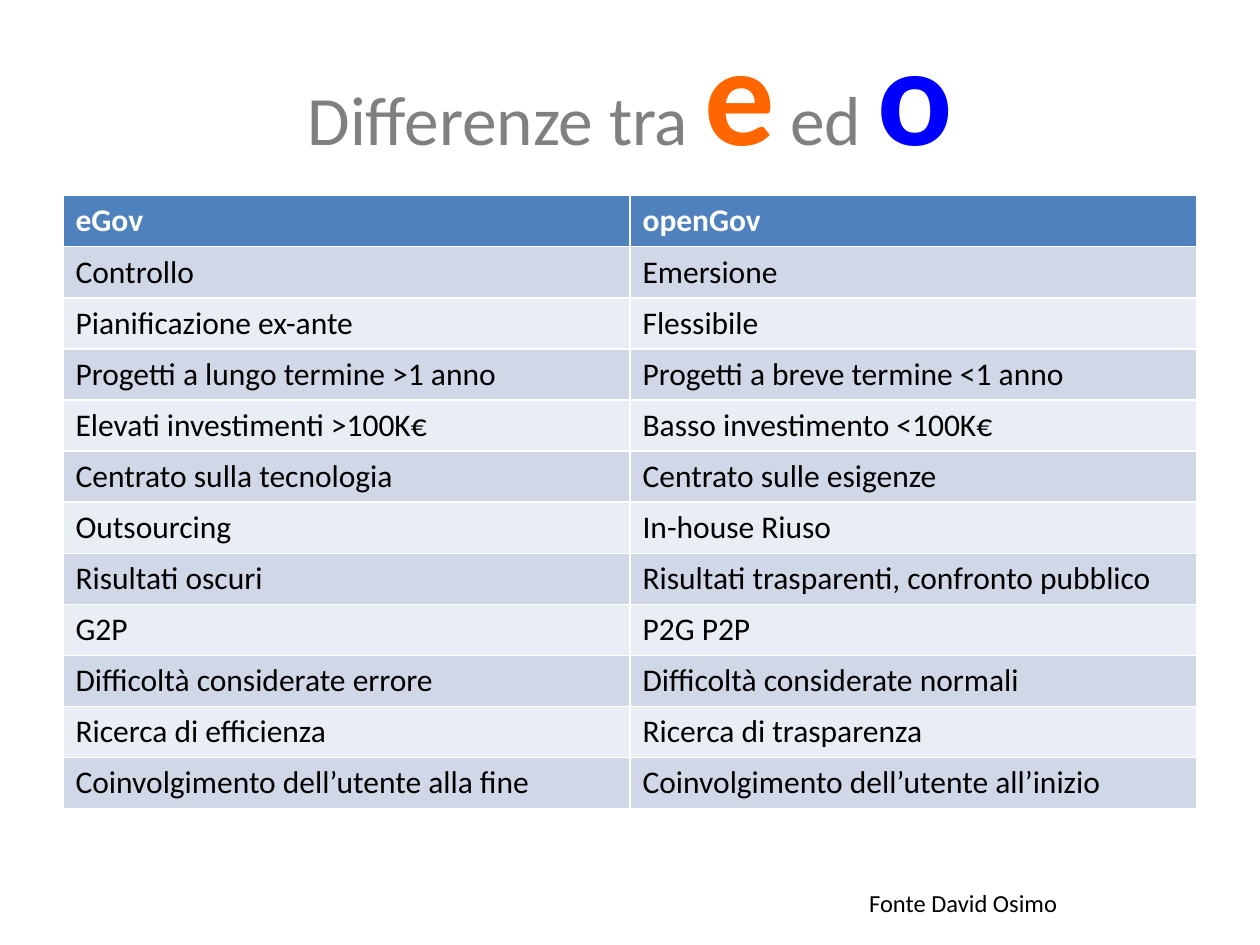
from dataclasses import dataclass

from pptx import Presentation
from pptx.dml.color import RGBColor
from pptx.enum.text import MSO_ANCHOR, PP_ALIGN
from pptx.util import Inches, Pt


@dataclass(frozen=True)
class Theme:
    font: str = "Calibri"
    grey: str = "808080"
    orange: str = "FF6600"
    blue: str = "0000FF"
    head: str = "4F81BD"
    bands: tuple = ("D0D8E8", "E9EDF4")
    white: str = "FFFFFF"
    black: str = "000000"
    title: float = 39.6
    letter: float = 80.1
    body: float = 18
    note: float = 14


THEME = Theme()
WIDE, HIGH = Inches(10), Inches(7.5)
ROWS = [
    ("eGov", "openGov"),
    ("Controllo", "Emersione"),
    ("Pianificazione ex-ante", "Flessibile"),
    ("Progetti a lungo termine >1 anno", "Progetti a breve termine <1 anno"),
    ("Elevati investimenti >100K€", "Basso investimento <100K€"),
    ("Centrato sulla tecnologia", "Centrato sulle esigenze"),
    ("Outsourcing", "In-house Riuso"),
    ("Risultati oscuri", "Risultati trasparenti, confronto pubblico"),
    ("G2P", "P2G P2P"),
    ("Difficoltà considerate errore", "Difficoltà considerate normali"),
    ("Ricerca di efficienza", "Ricerca di trasparenza"),
    ("Coinvolgimento dell’utente alla fine", "Coinvolgimento dell’utente all’inizio"),
]


def style(font, size, color, bold=False):
    font.name = THEME.font
    font.size = Pt(size)
    font.bold = bold
    font.color.rgb = RGBColor.from_string(color)


def area(left, top, width, height):
    return int(WIDE * left), int(HIGH * top), int(WIDE * width), int(HIGH * height)


def add_box(slide, place):
    frame = slide.shapes.add_textbox(*place).text_frame
    frame.word_wrap = True
    return frame


def add_title(slide, place, parts):
    frame = add_box(slide, place)
    frame.vertical_anchor = MSO_ANCHOR.MIDDLE
    line = frame.paragraphs[0]
    line.alignment = PP_ALIGN.CENTER
    for text, size, color, bold in parts:
        run = line.add_run()
        run.text = text
        style(run.font, size, color, bold)


def add_note(slide, place, text):
    line = add_box(slide, place).paragraphs[0]
    line.text = text
    style(line.font, THEME.note, THEME.black)


def fill_cell(cell, text, back, color, bold):
    cell.fill.solid()
    cell.fill.fore_color.rgb = RGBColor.from_string(back)
    line = cell.text_frame.paragraphs[0]
    line.text = text
    style(line.font, THEME.body, color, bold)


def add_grid(slide, place, rows):
    table = slide.shapes.add_table(len(rows), len(rows[0]), *place).table
    for index, texts in enumerate(rows):
        head = index == 0
        back = THEME.head if head else THEME.bands[(index - 1) % 2]
        color = THEME.white if head else THEME.black
        for cell, text in zip(table.rows[index].cells, texts):
            fill_cell(cell, text, back, color, head)


def main():
    deck = Presentation()
    deck.slide_width, deck.slide_height = WIDE, HIGH
    slide = deck.slides.add_slide(deck.slide_layouts[6])
    add_title(slide, area(0.05, 0.01, 0.9, 0.17), [
        ("Differenze tra ", THEME.title, THEME.grey, False),
        ("e", THEME.letter, THEME.orange, True),
        (" ed ", THEME.title, THEME.grey, False),
        ("o", THEME.letter, THEME.blue, True),
    ])
    add_grid(slide, area(0.05, 0.207, 0.9, 0.649), ROWS)
    add_note(slide, area(0.68, 0.933, 0.21, 0.045), "Fonte David Osimo")
    deck.save("out.pptx")


if __name__ == "__main__":
    main()
